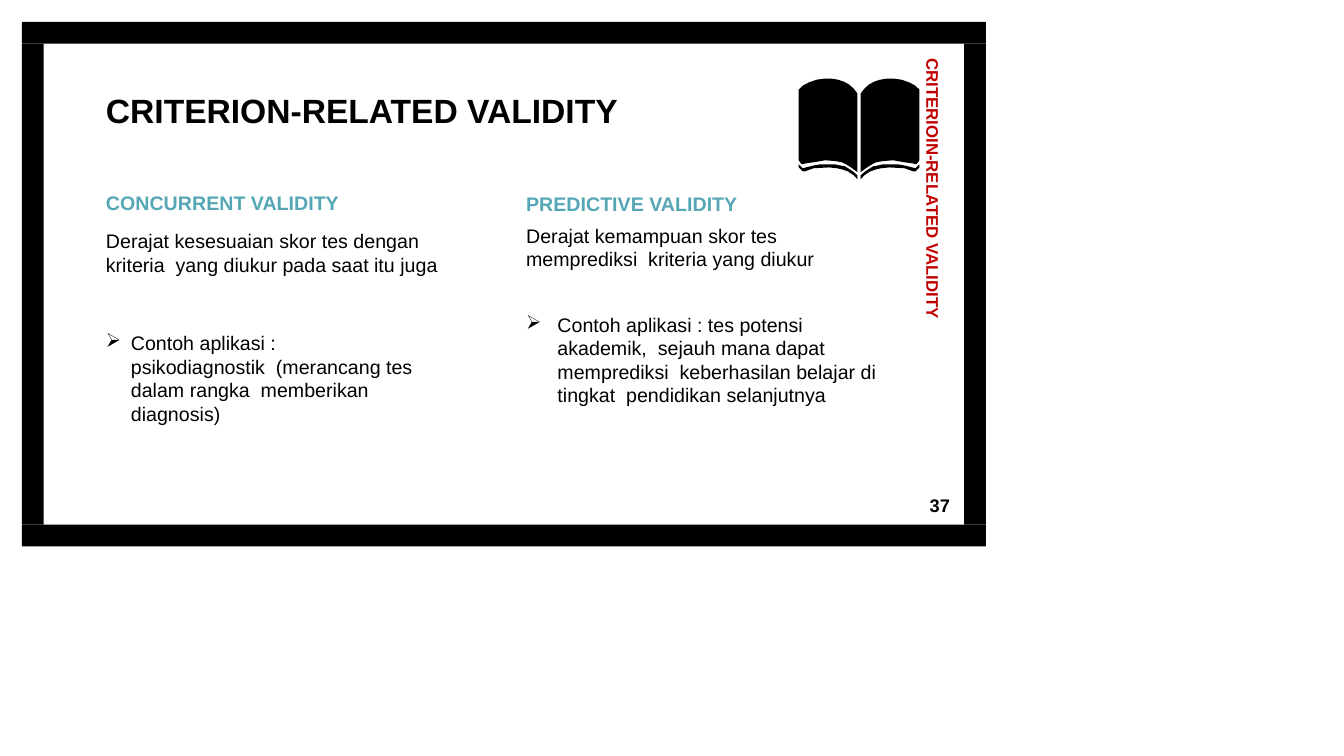
import pptx
import pptx.util
import pptx.dml.color
import pptx.enum.shapes
import pptx.enum.text
from lxml import etree

Cm, Pt = pptx.util.Cm, pptx.util.Pt
BLACK, TEAL, RED = "000000", "56A7B5", "C00000"

# text, left, top, width, height, size, colour, turn, line spacing
LABELS = [
    ("CRITERION-RELATED VALIDITY", 2.67, 2.23, 13.11, 1.09, 24, BLACK, 0, 1),
    ("CRITERIOIN-RELATED VALIDITY", 20.22, 4.54, 6.68, 0.53, 12, RED, 90, 1.19),
    ("37", 23.43, 12.42, 0.7, 0.61, 13, BLACK, 0, 1),
]

# box, then (text, space before, left margin, indent, right margin)
COLUMNS = [
    ((13.23, 4.83, 9.42, 5), [
        ("PREDICTIVE VALIDITY", 0, 0.03, 0, 0),
        ("Derajat kemampuan skor tes memprediksi  kriteria yang diukur",
         6, 0.03, 0, 0.75),
        ("Contoh aplikasi : tes potensi akademik,  sejauh mana dapat "
         "memprediksi  keberhasilan belajar di tingkat  pendidikan selanjutnya",
         30, 0.82, -0.79, 0.25)]),
    ((2.64, 4.82, 9.55, 5.26), [
        ("CONCURRENT VALIDITY", 0, 0.03, 0, 0),
        ("Derajat kesesuaian skor tes dengan kriteria  yang diukur pada saat "
         "itu juga", 10.1, 0.03, 0, 0.5),
        ("Contoh aplikasi : psikodiagnostik  (merancang tes dalam rangka  "
         "memberikan diagnosis)", 39.4, 0.66, -0.63, 1.75)]),
]

# distance from the spine, height on the slide
SPINE = 21.65
PAGE = [(0.04, 2.36), (0.13, 2.24), (0.25, 2.13), (0.38, 2.06), (0.53, 2.01),
        (0.71, 1.98), (0.86, 1.98), (1.07, 2.01), (1.27, 2.08), (1.42, 2.16),
        (1.52, 2.26), (1.52, 4.04), (1.45, 4.14), (1.3, 4.11), (1.14, 4.09),
        (0.86, 4.04), (0.61, 4.06), (0.43, 4.09), (0.33, 4.14), (0.2, 4.22),
        (0.04, 4.34)]
COVER = [(0.04, 4.42), (0.13, 4.34), (0.23, 4.27), (0.36, 4.19), (0.48, 4.17),
         (0.61, 4.14), (0.97, 4.14), (1.14, 4.17), (1.42, 4.24), (1.52, 4.14),
         (1.52, 4.22), (1.42, 4.32), (1.37, 4.32), (1.14, 4.24), (0.76, 4.22),
         (0.56, 4.24), (0.43, 4.27), (0.28, 4.32), (0.13, 4.42), (0.04, 4.52)]

# outer edge and thickness of the frame
LEFT, TOP, WIDE, HIGH, BAR = 0.55, 0.55, 24.3, 13.22, 0.55

prs = pptx.Presentation()
prs.slide_width, prs.slide_height = Cm(33.87), Cm(19.05)
slide = prs.slides.add_slide(prs.slide_layouts[6])
shapes = slide.shapes


def color(code):
    return pptx.dml.color.RGBColor.from_string(code)


def paint(shape):
    shape.shadow.inherit = False
    shape.fill.solid()
    shape.fill.fore_color.rgb = color(BLACK)
    shape.line.fill.background()


def style(para, size, code, bold):
    para.font.name, para.font.size = "Arial", Pt(size)
    para.font.bold = bold
    para.font.color.rgb = color(code)


def frame(box):
    """Add a text box and return it with its wrapping text frame."""
    shape = shapes.add_textbox(*map(Cm, box))
    text = shape.text_frame
    text.word_wrap = True
    text.margin_left = text.margin_top = 0
    text.margin_right = text.margin_bottom = 0
    return shape, text


def bullet(para):
    """Give the paragraph an arrowhead bullet, which is Ø in Wingdings."""
    props = para._p.get_or_add_pPr()
    tint = etree.SubElement(props, pptx.oxml.ns.qn("a:buClr"))
    etree.SubElement(tint, pptx.oxml.ns.qn("a:srgbClr"), val=BLACK)
    etree.SubElement(props, pptx.oxml.ns.qn("a:buFont"), typeface="Wingdings",
                     pitchFamily="2", charset="2")
    etree.SubElement(props, pptx.oxml.ns.qn("a:buChar"), char="Ø")


side = HIGH - 2 * BAR
for box in [(LEFT, TOP, WIDE, BAR), (LEFT, TOP + HIGH - BAR, WIDE, BAR),
            (LEFT, TOP + BAR, BAR, side),
            (LEFT + WIDE - BAR, TOP + BAR, BAR, side)]:
    paint(shapes.add_shape(pptx.enum.shapes.MSO_SHAPE.RECTANGLE, *map(Cm, box)))

for outline in (COVER, PAGE):
    for sign in (-1, 1):
        points = [(Cm(SPINE + sign * x), Cm(y)) for x, y in outline]
        pen = shapes.build_freeform(*points[0])
        pen.add_line_segments(points[1:])
        paint(pen.convert_to_shape())

for box, paras in COLUMNS:
    text = frame(box)[1]
    for i, (words, gap, left, indent, right) in enumerate(paras):
        para = text.paragraphs[0] if i == 0 else text.add_paragraph()
        para.text = words
        para.space_before = Pt(gap)
        props = para._p.get_or_add_pPr()
        for key, size in (("marL", left), ("indent", indent), ("marR", right)):
            props.set(key, str(Cm(size)))
        if indent:
            bullet(para)
        style(para, 14, BLACK if i else TEAL, i == 0)

for words, x, y, w, h, size, code, turn, pitch in LABELS:
    shape, text = frame((x, y, w, h))
    shape.rotation = turn
    text.vertical_anchor = pptx.enum.text.MSO_ANCHOR.MIDDLE
    para = text.paragraphs[0]
    para.text = words
    para.line_spacing = pitch
    style(para, size, code, True)

prs.save("out.pptx")
